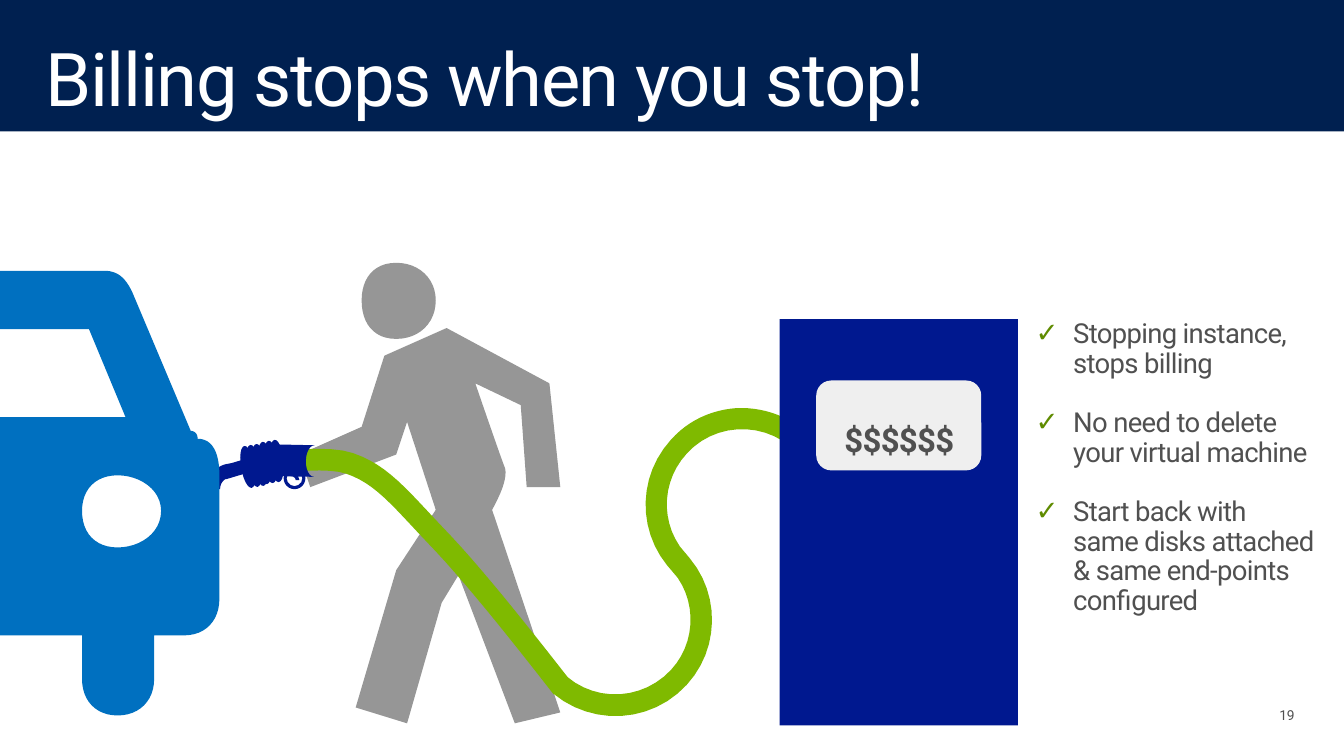
"""Build the slide "Billing stops when you stop!" with a car, a walker and a fuel pump."""
from lxml.etree import SubElement
from pptx import Presentation
from pptx.dml.color import RGBColor
from pptx.enum.shapes import MSO_SHAPE
from pptx.enum.text import MSO_ANCHOR, PP_ALIGN
from pptx.oxml.ns import qn
from pptx.util import Pt

PX = 9144
COLORS = {
    "navy": "002050", "white": "FFFFFF", "walker": "969696", "hose": "7FBA00", "pump": "00188F",
    "panel": "EFEFEF", "car": "0070C0", "text": "505050", "check": "5F8B00",
}
COLORS = {name: RGBColor.from_string(value) for name, value in COLORS.items()}

deck = Presentation()
deck.slide_width, deck.slide_height = 1360 * PX, 765 * PX
page = deck.slides.add_slide(deck.slide_layouts[6])
page.background.fill.solid()
page.background.fill.fore_color.rgb = COLORS["navy"]


def add_part(kind, place, color, turn=0):
    """Add a plain filled preset shape."""
    part = page.shapes.add_shape(kind, *(length * PX for length in place))
    part.shadow.inherit = False
    part.fill.solid()
    part.fill.fore_color.rgb = COLORS[color]
    part.line.fill.background()
    part.rotation = turn
    return part


def trace(contours, closed=True):
    """Trace contours of points (x, y) and cubic curves (x1, y1, x2, y2, x, y)."""
    builder = None
    for start, *steps in contours:
        points, (x, y) = [], start
        for step in steps:
            if len(step) == 2:
                points.append(step)
            else:
                x1, y1, x2, y2, x3, y3 = step
                for t in (index / 12 for index in range(1, 13)):
                    u = 1 - t
                    a, b, c, d = u ** 3, 3 * u * u * t, 3 * u * t * t, t ** 3
                    points.append((a * x + b * x1 + c * x2 + d * x3, a * y + b * y1 + c * y2 + d * y3))
            x, y = step[-2:]
        if builder is None:
            builder = page.shapes.build_freeform(start[0] * PX, start[1] * PX, scale=1.0)
        else:
            builder.move_to(start[0] * PX, start[1] * PX)
        builder.add_line_segments([(px * PX, py * PX) for px, py in points], close=closed)
    outline = builder.convert_to_shape()
    outline.shadow.inherit = False
    return outline


walker = [
    [(366, 304), (366, 327, 378, 343, 401, 343), (424, 343, 441, 327, 441, 304),
     (441, 282, 424, 266, 401, 266), (378, 266, 366, 282, 366, 304)],
    [(452, 332), (556, 388), (567, 493), (533, 493), (527, 410), (481, 388),
     (481, 388, 504, 455, 510, 471), (516, 482, 504, 505, 498, 516), (567, 721), (521, 732),
     (464, 582), (447, 610), (412, 732), (360, 716), (401, 577), (441, 516), (412, 427),
     (401, 460), (314, 493), (303, 460), (366, 432), (389, 360)],
]
hose_loop = [
    [(745, 413), (769, 412, 794, 419, 814, 436), (800, 452), (769, 426, 722, 429, 695, 459),
     (671, 485, 668, 524, 688, 553), (693, 559), (698, 565), (729, 602, 728, 657, 695, 693),
     (659, 732, 600, 735, 560, 702), (574, 685), (605, 711, 651, 708, 679, 678),
     (703, 652, 705, 613, 686, 585), (681, 579), (675, 572), (645, 535, 646, 481, 679, 445),
     (697, 425, 720, 415, 745, 413)],
]
hose_end = [
    [(569, 696), (523, 637, 476, 578, 440, 541), (404, 503, 386, 480, 354, 469),
     (322, 458, 246, 474, 246, 474)],
]
car = [
    [(200, 444), (200, 436, 193, 436, 193, 436), (134, 296), (127, 281, 119, 274, 105, 274),
     (-212, 274), (-227, 274, -234, 281, -234, 296), (-300, 444), (-315, 444, -330, 458, -330, 481),
     (-330, 606), (-330, 628, -315, 643, -293, 643), (-256, 643), (-256, 687),
     (-256, 709, -241, 724, -227, 724), (-205, 724, -190, 709, -190, 687), (-190, 643), (83, 643),
     (83, 687), (83, 709, 97, 724, 119, 724), (141, 724, 156, 709, 156, 687), (156, 643), (186, 643),
     (208, 643, 222, 628, 222, 606), (222, 481), (222, 458, 215, 444, 200, 444)],
    [(-197, 333), (90, 333), (127, 422), (-234, 422)],
    [(-227, 554), (-249, 554, -264, 540, -264, 517), (-264, 495, -249, 481, -227, 481),
     (-205, 481, -190, 495, -190, 517), (-190, 540, -205, 554, -227, 554)],
    [(119, 554), (97, 554, 83, 540, 83, 517), (83, 495, 97, 481, 119, 481),
     (141, 481, 163, 495, 163, 517), (163, 540, 141, 554, 119, 554)],
]

add_part(MSO_SHAPE.RECTANGLE, (0, 133, 1360, 632), "white")

for contours, color in [(walker, "walker"), (hose_loop, "hose")]:
    figure = trace(contours)
    figure.fill.solid()
    figure.fill.fore_color.rgb = COLORS[color]
    figure.line.fill.background()

hose = trace(hose_end, closed=False)
hose.fill.background()
hose.line.color.rgb = COLORS["hose"]
hose.line.width = Pt(15.75)

add_part(MSO_SHAPE.RECTANGLE, (789, 323, 241, 411), "pump")
add_part(MSO_SHAPE.ROUNDED_RECTANGLE, (826, 385, 167, 91), "panel")
price = add_part(MSO_SHAPE.RECTANGLE, (844, 429, 132, 46), "panel")

add_part(MSO_SHAPE.FLOWCHART_STORED_DATA, (267, 450, 51, 32), "pump", 1.2)
for first_left, first_top, turn in [(244, 451, 350), (261, 447, 354.4)]:
    for ring in range(3):
        add_part(MSO_SHAPE.OVAL, (first_left + 6 * ring, first_top - ring, 14, 43), "pump", turn)
add_part(MSO_SHAPE.ROUNDED_RECTANGLE, (237, 453, 14, 40), "pump", 253.4)
spout = add_part(MSO_SHAPE.BLOCK_ARC, (209, 469, 51, 51), "pump", 357.4)
guard = add_part(MSO_SHAPE.DONUT, (287, 473, 22, 22), "pump")
trigger = add_part(MSO_SHAPE.BLOCK_ARC, (284, 478, 19, 16), "pump")
trigger.element.spPr.get_or_add_xfrm().set("flipH", "1")
for part, values in [(spout, (108, 165.12, 0.27)), (guard, (0.14,)), (trigger, (108, 165.78, 0.23))]:
    for index, value in enumerate(values):
        part.adjustments[index] = value

car_body = trace(car)
car_body.fill.solid()
car_body.fill.fore_color.rgb = COLORS["car"]
car_body.line.fill.background()

title, checklist, page_number = (
    page.shapes.add_textbox(*(length * PX for length in place))
    for place in [(30, 32, 1300, 100), (1048, 324, 282, 405), (1274, 717, 56, 15)]
)
benefits = [
    "Stopping instance, stops billing",
    "No need to delete your virtual machine",
    "Start back with same disks attached & same end-points configured",
]
texts = [
    (title, (16, 11, 16, 10), ["Billing stops when you stop!"], "white", -102,
     {"size": Pt(54)}, MSO_ANCHOR.TOP, PP_ALIGN.LEFT),
    (price, (10, 0, 10, 10), ["$$$$$$"], "text", -50,
     {"size": Pt(24), "bold": True}, MSO_ANCHOR.TOP, PP_ALIGN.CENTER),
    (checklist, (0, 0, 0, 0), benefits, "text", -50,
     {"size": Pt(20)}, MSO_ANCHOR.TOP, PP_ALIGN.LEFT),
    (page_number, (0, 0, 20, 0), ["19"], "text", -20,
     {"size": Pt(10)}, MSO_ANCHOR.BOTTOM, PP_ALIGN.RIGHT),
]
for box, insets, lines, color, tracking, font_format, anchor, align in texts:
    frame = box.text_frame
    frame.word_wrap = True
    frame.vertical_anchor = anchor
    for side, inset in zip(("left", "top", "right", "bottom"), insets):
        setattr(frame, f"margin_{side}", inset * PX)
    for number, line in enumerate(lines):
        para = frame.add_paragraph() if number else frame.paragraphs[0]
        para.alignment = align
        para.line_spacing = 0.9
        if number:
            para.space_before = Pt(21.5)
        span = para.add_run()
        span.text = line
        for name, value in {"name": "Roboto", **font_format}.items():
            setattr(span.font, name, value)
        span.font.color.rgb = COLORS[color]
        span.font._element.set("spc", str(tracking))
        if lines is benefits:
            properties = para._p.get_or_add_pPr()
            properties.set("marL", str(38 * PX))
            properties.set("indent", str(-38 * PX))
            bullet_color = SubElement(properties, qn("a:buClr"))
            SubElement(bullet_color, qn("a:srgbClr"), val=str(COLORS["check"]))
            SubElement(properties, qn("a:buFont"), typeface="Roboto")
            SubElement(properties, qn("a:buChar"), char="✓")

deck.save("out.pptx")
